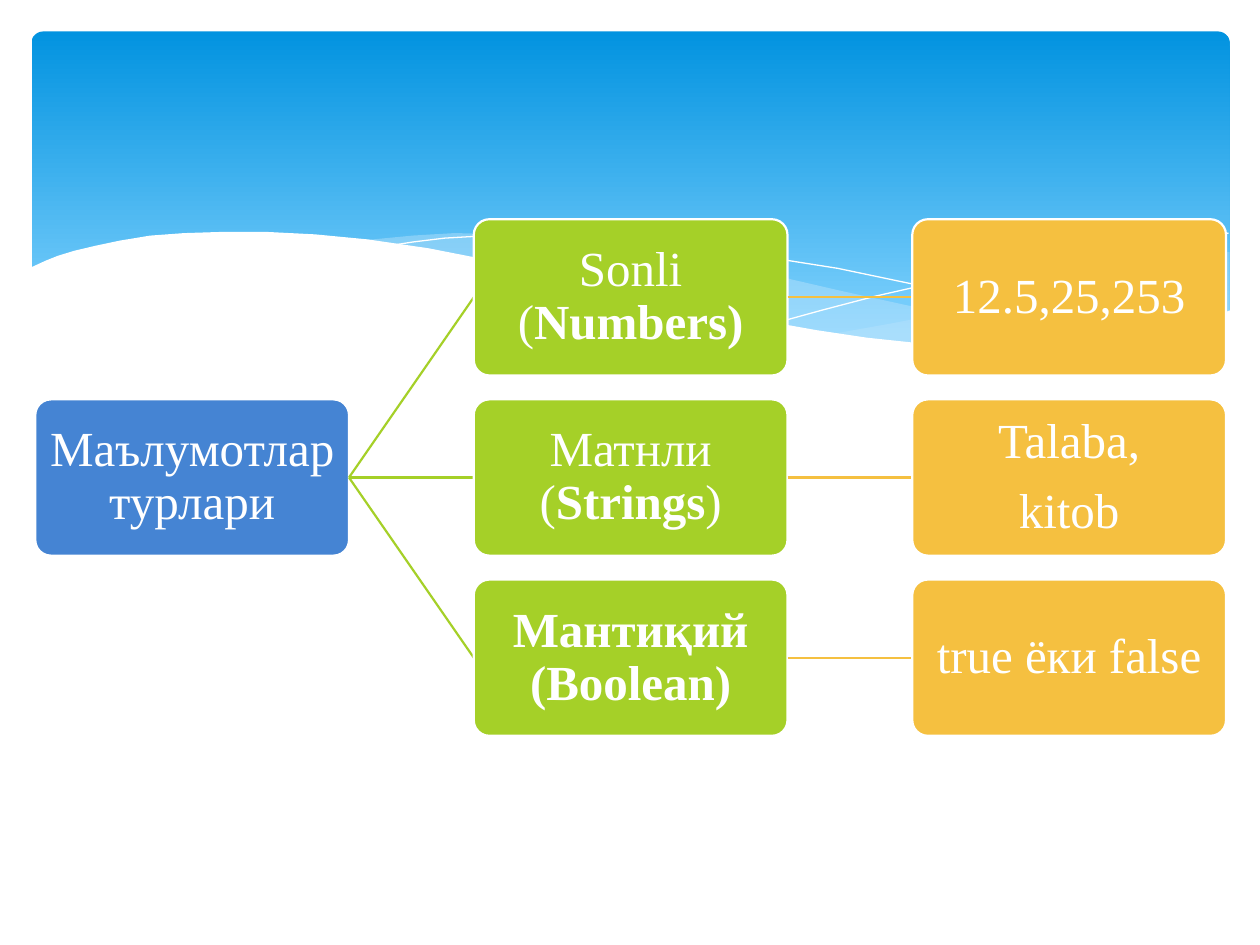
from lxml import etree
from pptx import Presentation
from pptx.dml.color import RGBColor
from pptx.enum.shapes import MSO_CONNECTOR as Connector, MSO_SHAPE as Shape
from pptx.enum.text import MSO_ANCHOR as Anchor, PP_ALIGN as Align
from pptx.oxml.ns import qn
from pptx.util import Inches, Pt

WHITE = RGBColor(0xFF, 0xFF, 0xFF)
SKY_TOP = RGBColor(0x02, 0x93, 0xE0)
SKY_BOTTOM = RGBColor(0x83, 0xD3, 0xFE)
PALE_BLUE = RGBColor(0xC6, 0xE7, 0xFC)
BLUE = RGBColor(0x45, 0x84, 0xD3)
GREEN = RGBColor(0xA5, 0xD0, 0x28)
AMBER = RGBColor(0xF5, 0xC0, 0x40)

# Tree grid, in inches
CARD_W, CARD_H = 2.49, 1.24
LEFT, TOP = 0.28, 1.74
COLUMN_STEP, ROW_STEP = 3.48, 1.43

# Wave outlines, in inches
RIGHT_SWELL = [
    (9.75, 2), (9.48, 2.04), (9.21, 2.1), (8.91, 2.16), (8.61, 2.23),
    (8.05, 2.37), (7.53, 2.48), (7.06, 2.57), (6.61, 2.65), (6.91, 2.69),
    (7.19, 2.72), (7.45, 2.75), (7.69, 2.77), (8.03, 2.78), (8.35, 2.77),
    (8.63, 2.75), (8.89, 2.72), (9.13, 2.67), (9.35, 2.62), (9.63, 2.52),
    (9.76, 2.47), (9.76, 2)]
MIDDLE_SWELL = [
    (8.93, 2.73), (8.66, 2.69), (8.07, 2.6), (7.41, 2.47), (6.68, 2.31),
    (6.29, 2.22), (5.98, 2.14), (5.69, 2.08), (5.41, 2.03), (5.14, 1.98),
    (4.89, 1.94), (4.42, 1.89), (3.99, 1.86), (3.61, 1.85), (3.28, 1.87),
    (2.86, 1.91), (3.23, 1.96), (3.62, 2.03), (4.04, 2.11), (4.49, 2.22),
    (5.3, 2.4), (5.84, 2.52), (6.18, 2.58), (6.5, 2.64), (6.8, 2.68),
    (7.09, 2.72), (7.36, 2.75), (7.61, 2.77), (7.96, 2.78), (8.28, 2.78),
    (8.57, 2.77)]
FALLING_CREST = [
    (3.09, 1.95), (3.28, 1.92), (3.53, 1.89), (3.87, 1.87), (4.33, 1.87),
    (4.69, 1.89), (5.1, 1.92), (5.56, 1.97), (6.08, 2.04), (6.65, 2.13),
    (7.27, 2.26), (7.95, 2.41), (8.31, 2.51), (8.69, 2.61), (9.07, 2.72)]
RISING_CREST = [
    (6.13, 2.57), (6.53, 2.46), (6.95, 2.35), (7.48, 2.23), (8.06, 2.1),
    (8.66, 1.99), (8.95, 1.94), (9.24, 1.9), (9.51, 1.87), (9.75, 1.85)]
WHITE_WAVE = [
    (9.77, 2.46), (9.59, 2.53), (9.4, 2.59), (9.2, 2.65), (8.99, 2.69),
    (8.75, 2.73), (8.5, 2.75), (8.23, 2.77), (7.93, 2.76), (7.61, 2.75),
    (7.26, 2.72), (6.88, 2.68), (6.48, 2.62), (6.03, 2.54), (5.55, 2.45),
    (5.03, 2.33), (4.47, 2.2), (3.91, 2.07), (3.4, 1.97), (2.92, 1.9),
    (2.5, 1.86), (2.11, 1.84), (1.77, 1.84), (1.46, 1.85), (1.19, 1.87),
    (0.95, 1.91), (0.76, 1.95), (0.59, 1.99), (0.46, 2.03), (0.36, 2.07),
    (0.23, 2.13), (0.23, 3.29), (9.77, 3.29)]

# Each type: row of (runs of the type's name, paragraphs of its example)
DATA_TYPES = [
    ([("Sonli (", False), ("Numbers)", True)], ["12.5,25,253"]),
    ([("Матнли (", False), ("Strings", True), (")", False)],
     ["Talaba,", "kitob"]),
    ([("Мантиқий (Boolean)", True)], ["true ёки false"]),
]


class TreeSlide:
    font_name = "Times New Roman"
    font_size = Pt(28)
    line_width = Pt(1.25)

    def __init__(self, slide):
        self.shapes = slide.shapes

    def sky(self, left, top, width, height):
        sky = self.shapes.add_shape(
            Shape.ROUNDED_RECTANGLE, Inches(left), Inches(top),
            Inches(width), Inches(height))
        sky.adjustments[0] = 0.034
        sky.shadow.inherit = False
        sky.line.fill.background()
        sky.fill.gradient()
        sky.fill.gradient_angle = 270
        stops = zip(sky.fill.gradient_stops,
                    [(0, SKY_TOP), (0.9, SKY_BOTTOM)])
        for stop, (position, color) in stops:
            stop.position = position
            stop.color.rgb = color

    def outline(self, points, closed):
        (start_x, start_y), *rest = [(Inches(x), Inches(y)) for x, y in points]
        builder = self.shapes.build_freeform(start_x, start_y)
        builder.add_line_segments(rest, close=closed)
        outline = builder.convert_to_shape()
        outline.shadow.inherit = False
        return outline

    def wave(self, points, color, opacity=100):
        wave = self.outline(points, closed=True)
        wave.line.fill.background()
        wave.fill.solid()
        wave.fill.fore_color.rgb = color
        if opacity < 100:
            tint = wave.fill._xPr.find(qn("a:solidFill"))[0]
            etree.SubElement(tint, qn("a:alpha"), val=str(opacity * 1000))

    def crest(self, points):
        crest = self.outline(points, closed=False)
        crest.fill.background()
        crest.line.color.rgb = WHITE
        crest.line.width = Pt(0)

    def card(self, column, row, color, paragraphs):
        card = self.shapes.add_shape(
            Shape.ROUNDED_RECTANGLE,
            Inches(LEFT + column * COLUMN_STEP), Inches(TOP + row * ROW_STEP),
            Inches(CARD_W), Inches(CARD_H))
        card.adjustments[0] = 0.1
        card.shadow.inherit = False
        card.fill.solid()
        card.fill.fore_color.rgb = color
        card.line.color.rgb = WHITE
        card.line.width = self.line_width
        frame = card.text_frame
        frame.word_wrap = True
        frame.vertical_anchor = Anchor.MIDDLE
        frame.margin_left = frame.margin_right = Inches(0.06)
        frame.margin_top = frame.margin_bottom = Inches(0.06)
        for index, runs in enumerate(paragraphs):
            paragraph = frame.add_paragraph() if index else frame.paragraphs[0]
            paragraph.alignment = Align.CENTER
            paragraph.line_spacing = 0.9
            paragraph.space_after = Pt(9.8)
            for text, bold in runs:
                run = paragraph.add_run()
                run.text = text
                run.font.name = self.font_name
                run.font.size = self.font_size
                run.font.bold = bold
                run.font.color.rgb = WHITE

    def branch(self, column, from_row, to_row, color):
        """Join a card to one in the next column."""
        start_x = LEFT + column * COLUMN_STEP + CARD_W
        end_x = LEFT + (column + 1) * COLUMN_STEP
        start_y, end_y = (TOP + row * ROW_STEP + CARD_H / 2
                          for row in (from_row, to_row))
        branch = self.shapes.add_connector(
            Connector.STRAIGHT, Inches(start_x), Inches(start_y),
            Inches(end_x), Inches(end_y))
        branch.line.color.rgb = color
        branch.line.width = self.line_width
        etree.SubElement(branch._element.spPr, qn("a:effectLst"))


def main():
    deck = Presentation()
    deck.slide_width, deck.slide_height = Inches(10), Inches(7.5)
    tree = TreeSlide(deck.slides.add_slide(deck.slide_layouts[6]))

    # Sky and waves
    tree.sky(0.25, 0.25, 9.51, 2.7)
    tree.wave(RIGHT_SWELL, PALE_BLUE, opacity=29)
    tree.wave(MIDDLE_SWELL, PALE_BLUE, opacity=40)
    tree.crest(FALLING_CREST)
    tree.crest(RISING_CREST)
    tree.wave(WHITE_WAVE, WHITE)

    # Root, then a branch for each data type with its example
    root_row = 1
    tree.card(0, root_row, BLUE, [[("Маълумотлар турлари", False)]])
    for row, (type_name, example) in enumerate(DATA_TYPES):
        tree.branch(0, root_row, row, GREEN)
        tree.card(1, row, GREEN, [type_name])
        tree.branch(1, row, row, AMBER)
        tree.card(2, row, AMBER, [[(line, False)] for line in example])

    deck.save("out.pptx")


if __name__ == "__main__":
    main()
